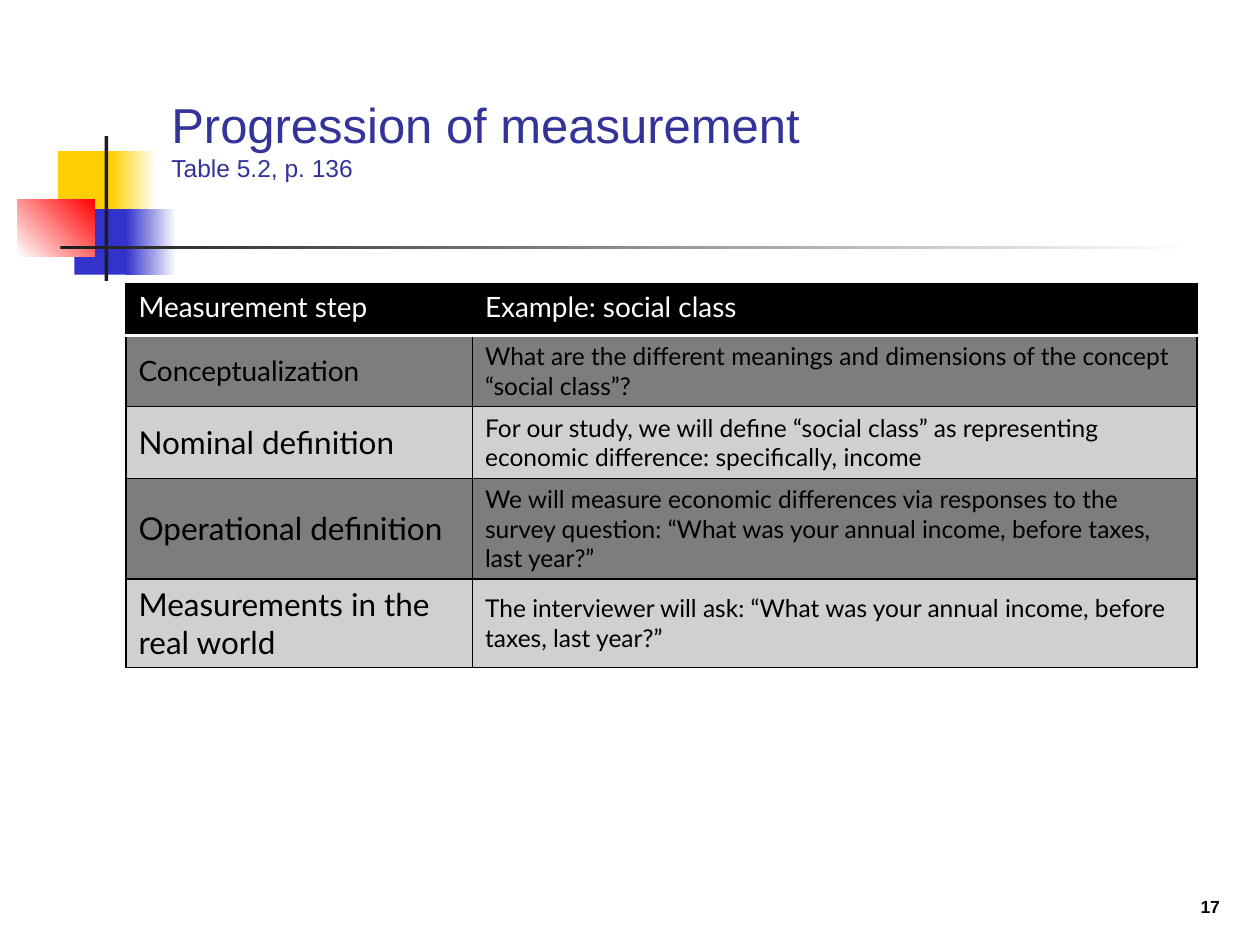
from dataclasses import dataclass

import pptx
import pptx.dml.color
import pptx.enum.shapes
import pptx.enum.text
import pptx.oxml.ns
import pptx.util
from lxml import etree

Inches, Pt = pptx.util.Inches, pptx.util.Pt
RGB = pptx.dml.color.RGBColor.from_string
ANCHOR = pptx.enum.text.MSO_ANCHOR
ALIGN = pptx.enum.text.PP_ALIGN
qn = pptx.oxml.ns.qn


@dataclass(frozen=True)
class Theme:
    heading_font: str = "Arial"
    table_font: str = "Lato"
    title: str = "333399"
    black: str = "000000"
    white: str = "FFFFFF"
    ink: str = "1C1C1C"
    yellow: str = "FFCF01"
    blue: str = "3333CC"
    red: str = "FF0000"
    dark_band: str = "7D7D7D"
    light_band: str = "D0D0D0"
    title_size: int = 28
    subtitle_size: int = 14
    header_size: int = 16
    step_size: int = 18
    example_size: int = 14
    number_size: int = 10


THEME = Theme()

# left, top, width, height, colours (two make a gradient), gradient angle
ORNAMENT = [
    (0.46, 1.2, 0.48, 0.52, [THEME.yellow], 0),
    (0.88, 1.2, 0.36, 0.52, [THEME.yellow, THEME.white], 0),
    (0.59, 1.66, 0.46, 0.52, [THEME.blue], 0),
    (1, 1.66, 0.4, 0.52, [THEME.blue, THEME.white], 0),
    (0.14, 1.58, 0.61, 0.46, [THEME.white, THEME.red], 45),
    (0.83, 1.08, 0.03, 1.15, [THEME.ink], 0),
    (0.48, 1.95, 9, 0.03, [THEME.ink, THEME.white], 0),
]

HEADER = ("Measurement step", "Example: social class")
# step, its type size, example
STEPS = [
    ("Conceptualization", THEME.header_size,
     "What are the different meanings and dimensions of the concept “social class”?"),
    ("Nominal definition", THEME.step_size,
     "For our study, we will define “social class” as representing economic difference: "
     "specifically, income"),
    ("Operational definition", THEME.step_size,
     "We will measure economic differences via responses to the survey question: "
     "“What was your annual income, before taxes, last year?”"),
    ("Measurements in the real world", THEME.step_size,
     "The interviewer will ask: “What was your annual income, before taxes, last year?”"),
]


def format_run(r, font, size, color, bold=False):
    r.font.name = font
    r.font.size = Pt(size)
    r.font.bold = bold
    r.font.color.rgb = RGB(color)


def add_block(s, left, top, width, height, colors, angle):
    sp = s.shapes.add_shape(pptx.enum.shapes.MSO_SHAPE.RECTANGLE,
                            Inches(left), Inches(top), Inches(width), Inches(height))
    sp.shadow.inherit = False
    sp.line.fill.background()
    if len(colors) == 1:
        sp.fill.solid()
        sp.fill.fore_color.rgb = RGB(colors[0])
        return
    sp.fill.gradient()
    sp.fill.gradient_angle = angle
    for stop, color in zip(sp.fill.gradient_stops, colors):
        stop.color.rgb = RGB(color)


def set_title(s, title, subtitle):
    sp = s.shapes.title
    sp.left, sp.top, sp.width, sp.height = map(Inches, (1.26, 0.23, 8.52, 1.27))
    tf = sp.text_frame
    tf.auto_size = pptx.enum.text.MSO_AUTO_SIZE.NONE
    tf.vertical_anchor = ANCHOR.BOTTOM
    p = tf.paragraphs[0]
    p.text = f"{title}\v{subtitle}"
    p.alignment = ALIGN.LEFT
    for r, size in zip(p.runs, (THEME.title_size, THEME.subtitle_size)):
        format_run(r, THEME.heading_font, size, THEME.title)
    line_break = p._p.find(qn("a:br"))
    etree.SubElement(line_break, qn("a:rPr"), sz=str(THEME.title_size * 100))


def set_border(cell, side, color, width):
    ln = etree.SubElement(cell._tc.get_or_add_tcPr(), qn(f"a:ln{side}"), w=str(Pt(width)))
    fill = etree.SubElement(ln, qn("a:solidFill"))
    etree.SubElement(fill, qn("a:srgbClr"), val=color)


def fill_cell(cell, text, size, color, band, anchor, edges):
    """Write one cell; edges maps a side to a border other than thin black."""
    for side in "LRTB":
        set_border(cell, side, *edges.get(side, (THEME.black, 0.75)))
    cell.fill.solid()
    cell.fill.fore_color.rgb = RGB(band)
    cell.vertical_anchor = anchor
    cell.text_frame.text = text
    format_run(cell.text_frame.paragraphs[0].runs[0], THEME.table_font, size, color)


def add_steps_table(s):
    row_height = 0.41
    rows = len(STEPS) + 1
    table = s.shapes.add_table(rows, 2, Inches(1), Inches(2.25),
                               Inches(8.5), Inches(row_height * rows)).table
    for column, width in zip(table.columns, (2.75, 5.75)):
        column.width = Inches(width)
    rule = (THEME.white, 2)
    for col, text in enumerate(HEADER):
        inner_side = "LR"[1 - col]
        fill_cell(table.cell(0, col), text, THEME.header_size, THEME.white, THEME.black,
                  ANCHOR.TOP, {"B": rule, inner_side: (THEME.black, 0.75)})
    for row, (step, step_size, example) in enumerate(STEPS, start=1):
        band = THEME.dark_band if row % 2 else THEME.light_band
        edges = {"T": rule} if row == 1 else {}
        for col, (text, size) in enumerate(((step, step_size), (example, THEME.example_size))):
            fill_cell(table.cell(row, col), text, size, THEME.black, band,
                      ANCHOR.MIDDLE, edges)


def add_slide_number(s, number):
    sp = s.shapes.add_textbox(Inches(7.7), Inches(6.83), Inches(2.08), Inches(0.5))
    tf = sp.text_frame
    tf.word_wrap = True
    tf.vertical_anchor = ANCHOR.BOTTOM
    p = tf.paragraphs[0]
    p.text = number
    p.alignment = ALIGN.RIGHT
    format_run(p.runs[0], THEME.heading_font, THEME.number_size, THEME.black, bold=True)


def main():
    prs = pptx.Presentation()
    prs.slide_width, prs.slide_height = Inches(10), Inches(7.5)
    s = prs.slides.add_slide(prs.slide_layouts.get_by_name("Title Only"))
    for block in ORNAMENT:
        add_block(s, *block)
    set_title(s, "Progression of measurement", "Table 5.2, p. 136")
    add_steps_table(s)
    add_slide_number(s, "17")
    prs.save("out.pptx")


if __name__ == "__main__":
    main()
